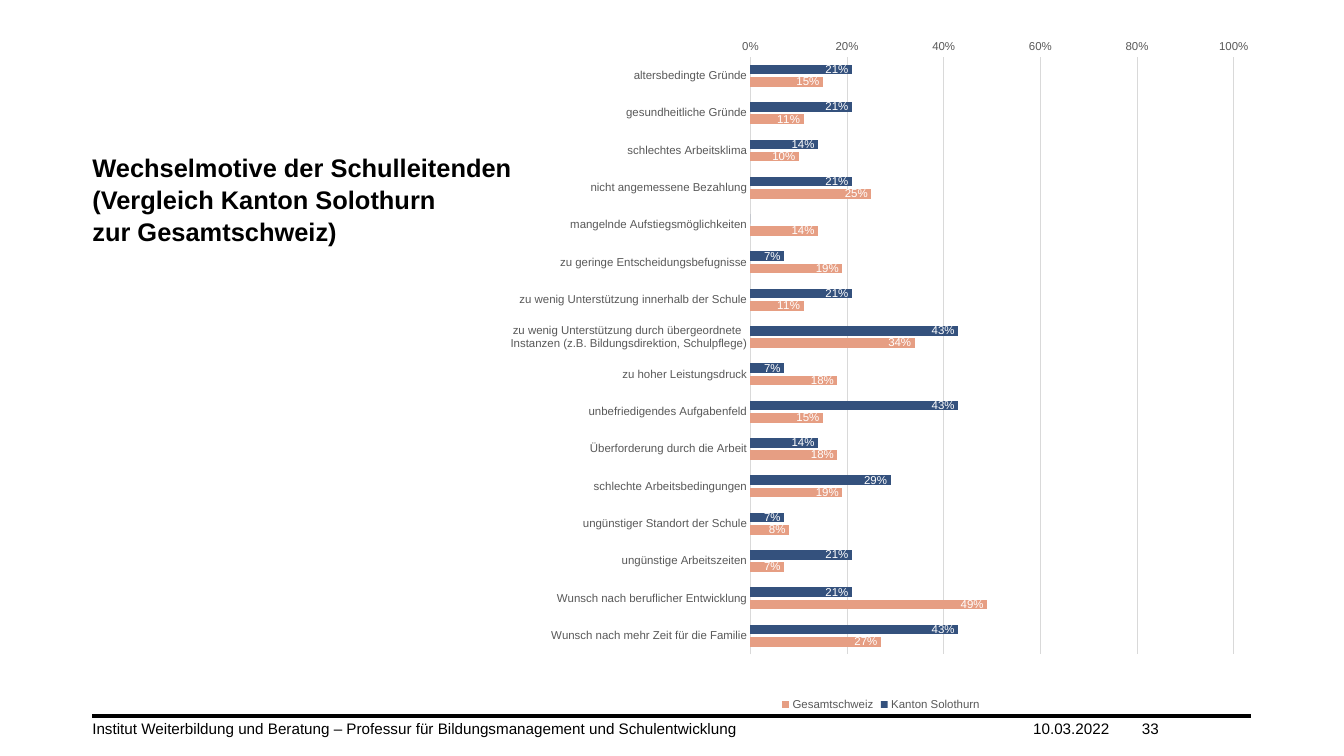
from lxml.etree import SubElement
from pptx import Presentation
from pptx.chart.data import CategoryChartData
from pptx.dml.color import RGBColor
from pptx.enum.chart import (XL_AXIS_CROSSES, XL_CHART_TYPE, XL_LABEL_POSITION,
                             XL_LEGEND_POSITION, XL_TICK_MARK)
from pptx.enum.shapes import MSO_CONNECTOR
from pptx.enum.text import MSO_ANCHOR, MSO_AUTO_SIZE, PP_ALIGN
from pptx.oxml import parse_xml
from pptx.oxml.ns import nsdecls, qn
from pptx.util import Inches, Pt

BLACK = RGBColor(0x00, 0x00, 0x00)
WHITE = RGBColor(0xFF, 0xFF, 0xFF)
GREY = RGBColor(0x59, 0x59, 0x59)
LIGHT_GREY = RGBColor(0xD9, 0xD9, 0xD9)
NAVY = RGBColor(0x34, 0x51, 0x7D)
SALMON = RGBColor(0xE6, 0x9E, 0x83)

TITLE = "Wechselmotive der Schulleitenden \v(Vergleich Kanton Solothurn\vzur Gesamtschweiz)"
FOOTERS = [
    (1.01, 10.29, "Institut Weiterbildung und Beratung – "
                  "Professur für Bildungsmanagement und Schulentwicklung"),
    (11.3, 1.19, "10.03.2022"),
    (12.49, 1.19, "33"),
]
MOTIVES = [
    ("altersbedingte Gründe", 0.21, 0.15),
    ("gesundheitliche Gründe", 0.21, 0.11),
    ("schlechtes Arbeitsklima", 0.14, 0.10),
    ("nicht angemessene Bezahlung", 0.21, 0.25),
    ("mangelnde Aufstiegsmöglichkeiten", 0, 0.14),
    ("zu geringe Entscheidungsbefugnisse", 0.07, 0.19),
    ("zu wenig Unterstützung innerhalb der Schule", 0.21, 0.11),
    ("zu wenig Unterstützung durch übergeordnete \n"
     "Instanzen (z.B. Bildungsdirektion, Schulpflege)", 0.43, 0.34),
    ("zu hoher Leistungsdruck", 0.07, 0.18),
    ("unbefriedigendes Aufgabenfeld", 0.43, 0.15),
    ("Überforderung durch die Arbeit", 0.14, 0.18),
    ("schlechte Arbeitsbedingungen", 0.29, 0.19),
    ("ungünstiger Standort der Schule", 0.07, 0.08),
    ("ungünstige Arbeitszeiten", 0.21, 0.07),
    ("Wunsch nach beruflicher Entwicklung", 0.21, 0.49),
    ("Wunsch nach mehr Zeit für die Familie", 0.43, 0.27),
]
REGIONS = [("Kanton Solothurn", NAVY), ("Gesamtschweiz", SALMON)]
PLOT_AREA = {"x": 0.33, "y": 0.02, "w": 0.63, "h": 0.89}


class SlideBuilder:
    font_name = "Arial"

    def __init__(self, presentation):
        self.slide = presentation.slides.add_slide(presentation.slide_layouts[5])

    def style_font(self, font, size, color, bold=False):
        font.name = self.font_name
        font.size = Pt(size)
        font.bold = bold
        font.color.rgb = color

    def fill_text(self, shape, text, size, anchor, bold=False):
        frame = shape.text_frame
        frame.margin_left = frame.margin_right = frame.margin_top = frame.margin_bottom = 0
        frame.word_wrap = True
        frame.auto_size = MSO_AUTO_SIZE.NONE
        frame.vertical_anchor = anchor
        frame.text = text
        paragraph = frame.paragraphs[0]
        paragraph.alignment = PP_ALIGN.LEFT
        self.style_font(paragraph.font, size, BLACK, bold)
        return paragraph

    def title(self, text, left, top, width, height):
        shape = self.slide.shapes.title
        shape.left, shape.top = Inches(left), Inches(top)
        shape.width, shape.height = Inches(width), Inches(height)
        paragraph = self.fill_text(shape, text, 20, MSO_ANCHOR.TOP, bold=True)
        paragraph.line_spacing = 1.05

    def text(self, text, left, top, width, height):
        shape = self.slide.shapes.add_textbox(
            Inches(left), Inches(top), Inches(width), Inches(height))
        self.fill_text(shape, text, 12, MSO_ANCHOR.BOTTOM)

    def rule(self, left, right, top):
        line = self.slide.shapes.add_connector(
            MSO_CONNECTOR.STRAIGHT, Inches(left), Inches(top), Inches(right), Inches(top))
        line.line.color.rgb = BLACK
        line.line.width = Pt(3)
        SubElement(line._element.spPr, qn("a:effectLst"))

    def bar_chart(self, rows, regions, left, top, width, height):
        data = CategoryChartData(number_format="0%")
        names, *columns = zip(*rows)
        data.categories = names
        for (region, _), values in zip(regions, columns):
            data.add_series(region, values)
        chart = self.slide.shapes.add_chart(
            XL_CHART_TYPE.BAR_CLUSTERED, Inches(left), Inches(top),
            Inches(width), Inches(height), data).chart
        self.style_font(chart.font, 10, BLACK)
        chart.has_title = False
        chart.has_legend = True
        chart.legend.position = XL_LEGEND_POSITION.BOTTOM
        chart.legend.include_in_layout = False
        self.style_font(chart.legend.font, 9, GREY)
        self.place_plot(chart)
        self.style_axes(chart)
        plot = chart.plots[0]
        plot.gap_width = 165
        plot.overlap = -30
        plot.vary_by_categories = False
        for series, (_, color) in zip(plot.series, regions):
            self.style_series(series, color)

    def place_plot(self, chart):
        plot_area = chart._chartSpace.chart.plotArea
        for layout in plot_area.findall(qn("c:layout")):
            plot_area.remove(layout)
        modes = "".join(f'<c:{axis}Mode val="edge"/>' for axis in "xy")
        sizes = "".join(f'<c:{key} val="{value}"/>' for key, value in PLOT_AREA.items())
        plot_area.insert(0, parse_xml(
            f'<c:layout {nsdecls("c")}><c:manualLayout><c:layoutTarget val="inner"/>'
            f'{modes}{sizes}</c:manualLayout></c:layout>'))

    def style_axes(self, chart):
        category_axis, value_axis = chart.category_axis, chart.value_axis
        for axis in (category_axis, value_axis):
            axis.major_tick_mark = axis.minor_tick_mark = XL_TICK_MARK.NONE
            self.style_font(axis.tick_labels.font, 9, GREY)
        category_axis.reverse_order = True
        category_axis.crosses = XL_AXIS_CROSSES.MAXIMUM
        value_axis.minimum_scale = 0
        value_axis.maximum_scale = 1
        value_axis.major_unit = 0.2
        value_axis.has_major_gridlines = True
        value_axis.tick_labels.number_format = "0%"
        value_axis.tick_labels.number_format_is_linked = False
        value_axis.format.line.fill.background()
        for line in (category_axis.format.line, value_axis.major_gridlines.format.line):
            line.color.rgb = LIGHT_GREY
            line.width = Pt(0.75)

    def style_series(self, series, color):
        series.format.fill.solid()
        series.format.fill.fore_color.rgb = color
        series.invert_if_negative = False
        labels = series.data_labels
        labels.show_value = True
        labels.position = XL_LABEL_POSITION.INSIDE_END
        labels.number_format = "0%"
        labels.number_format_is_linked = False
        self.style_font(labels.font, 9, WHITE)
        empty_bars = [index for index, value in enumerate(series.values) if not value]
        for place, index in enumerate(empty_bars):
            labels._element.insert(place, parse_xml(
                f'<c:dLbl {nsdecls("c")}><c:idx val="{index}"/><c:delete val="1"/></c:dLbl>'))


def main():
    presentation = Presentation()
    presentation.slide_width = Inches(14.7)
    presentation.slide_height = Inches(8.27)
    builder = SlideBuilder(presentation)
    builder.rule(1.01, 13.68, 7.83)
    for left, width, text in FOOTERS:
        builder.text(text, left, 7.87, width, 0.2)
    builder.title(TITLE, 1.01, 1.65, 12.67, 0.4)
    builder.bar_chart(MOTIVES, REGIONS, 5.44, 0.44, 8.39, 7.38)
    presentation.save("out.pptx")


if __name__ == "__main__":
    main()
